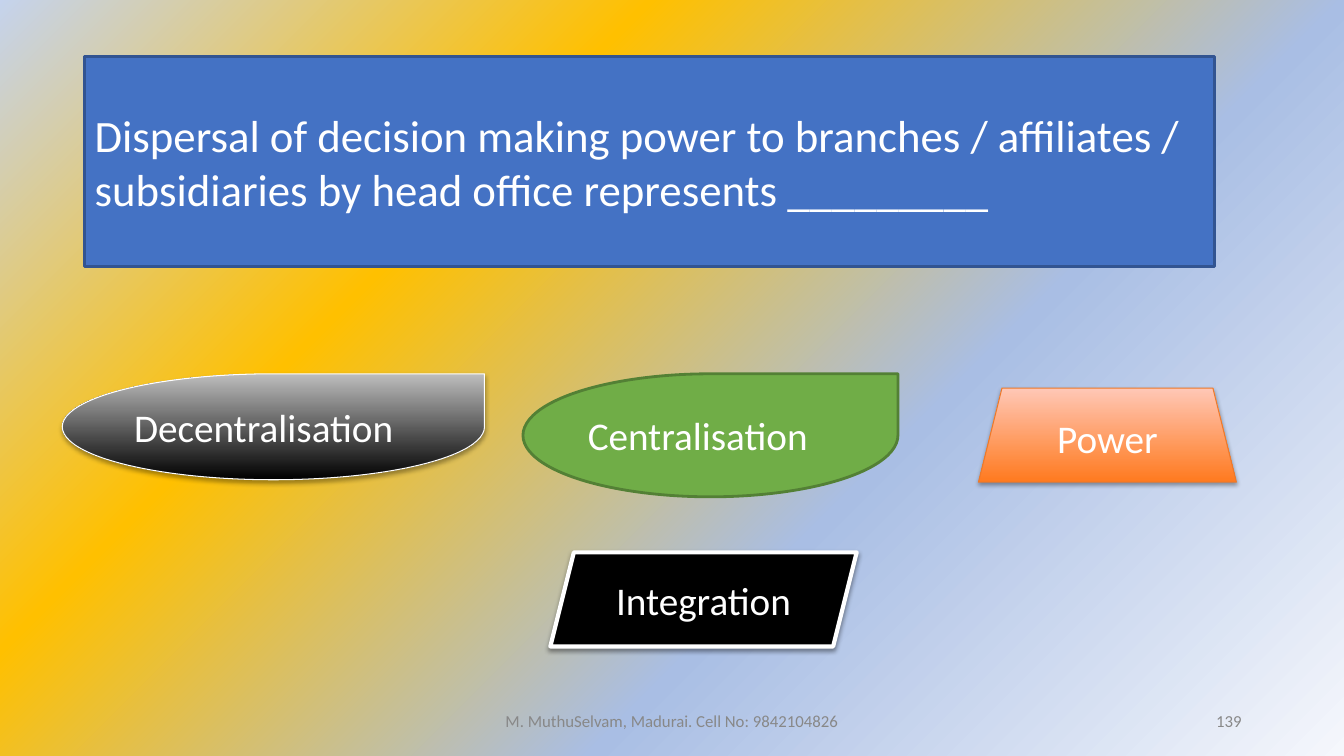
from lxml import etree
from pptx import Presentation
from pptx.dml.color import RGBColor
from pptx.enum.shapes import MSO_SHAPE
from pptx.enum.text import MSO_ANCHOR, MSO_AUTO_SIZE, PP_ALIGN
from pptx.oxml import parse_xml
from pptx.oxml.ns import nsdecls, qn
from pptx.util import Cm, Pt

TITLE_ONLY = 5
TEARDROP, TRAPEZOID, PARALLELOGRAM = (
    MSO_SHAPE.TEAR, MSO_SHAPE.TRAPEZOID, MSO_SHAPE.PARALLELOGRAM)
LEFT, CENTER, RIGHT = PP_ALIGN.LEFT, PP_ALIGN.CENTER, PP_ALIGN.RIGHT
MIDDLE = MSO_ANCHOR.MIDDLE
NO_AUTOFIT = MSO_AUTO_SIZE.NONE

UPWARD = '<a:lin ang="16200000" scaled="0"/>'
FROM_CORNER = ('<a:path path="circle"><a:fillToRect l="100000" t="100000"/></a:path>'
               '<a:tileRect r="-100000" b="-100000"/>')


def rgb(value):
    return RGBColor.from_string(value)


class QuizSlide:
    FONT = "Calibri"
    WHITE = "FFFFFF"
    GREY = "888888"

    def __init__(self, deck):
        self.slide = deck.slides.add_slide(deck.slide_layouts[TITLE_ONLY])

    def gradient(self, owner, fill, stops, direction):
        """Fill with (percent, colour) stops; direction is the closing XML."""
        fill.gradient()
        old = owner.find(".//" + qn("a:gradFill"))
        stop_xml = "".join(
            f'<a:gs pos="{percent * 1000}"><a:srgbClr val="{colour}"/></a:gs>'
            for percent, colour in stops)
        old.getparent().replace(old, parse_xml(
            f'<a:gradFill {nsdecls("a")} rotWithShape="1">'
            f'<a:gsLst>{stop_xml}</a:gsLst>{direction}</a:gradFill>'))

    def background(self, stops):
        self.gradient(self.slide._element, self.slide.background.fill,
                      stops, FROM_CORNER)

    def set_text(self, shape, text, size, colour, align):
        frame = shape.text_frame
        frame.word_wrap = True
        frame.auto_size = NO_AUTOFIT
        frame.vertical_anchor = MIDDLE
        frame.text = text
        paragraph = frame.paragraphs[0]
        paragraph.alignment = align
        paragraph.line_spacing = 1.0
        paragraph.space_before = Pt(0)
        font = paragraph.font
        font.name, font.size = self.FONT, Pt(size)
        font.color.rgb = rgb(colour)

    def paint(self, shape, fill, line, width):
        """Fill with one colour, or upward with a (bottom, top) pair."""
        if isinstance(fill, tuple):
            bottom, top = fill
            self.gradient(shape._element.spPr, shape.fill,
                          [(0, bottom), (100, top)], UPWARD)
        else:
            shape.fill.solid()
            shape.fill.fore_color.rgb = rgb(fill)
        shape.line.color.rgb = rgb(line)
        shape.line.width = Pt(width)

    def drop_shadow(self, shape, opacity, distance):
        effects = shape._element.spPr.find(qn("a:effectLst"))
        shadow = etree.SubElement(
            effects, qn("a:outerShdw"), blurRad="40000", dist=str(Pt(distance)),
            dir="5400000", rotWithShape="0")
        black = etree.SubElement(shadow, qn("a:srgbClr"), val="000000")
        etree.SubElement(black, qn("a:alpha"), val=str(opacity * 1000))

    def question(self, text, box, fill, line):
        """Put the title placeholder in a wave."""
        title = self.slide.shapes.title
        title.left, title.top, title.width, title.height = map(Cm, box)
        title._element.spPr.append(parse_xml(
            f'<a:prstGeom {nsdecls("a")} prst="wave"><a:avLst/></a:prstGeom>'))
        self.paint(title, fill, line, 2)
        self.set_text(title, text, 32, self.WHITE, LEFT)

    def answer(self, text, kind, box, fill, line, width, align, shadow=None):
        shape = self.slide.shapes.add_shape(kind, *map(Cm, box))
        shape.shadow.inherit = False
        self.paint(shape, fill, line, width)
        if shadow:
            self.drop_shadow(shape, *shadow)
        self.set_text(shape, text, 28, self.WHITE, align)

    def footer(self, text, left, width, align):
        box = self.slide.shapes.add_textbox(
            Cm(left), Cm(17.65), Cm(width), Cm(1.01))
        self.set_text(box, text, 12, self.GREY, align)


def main():
    deck = Presentation()
    deck.slide_width, deck.slide_height = Cm(33.87), Cm(19.05)
    quiz = QuizSlide(deck)
    quiz.background([(0, "F5F7FC"), (36, "A9BEE4"), (69, "FFC000"), (100, "C5D3ED")])
    quiz.question(
        "Dispersal of decision making power to branches / affiliates / "
        "subsidiaries by head office represents _________",
        (2.13, 1.43, 28.47, 5.28), "4472C4", "325491")

    soft, firm = (35, 1.8), (38, 1.6)
    quiz.answer("Decentralisation", TEARDROP, (1.57, 9.42, 10.64, 2.67),
                ("000000", "BDBDBD"), "FFFFFF", 0.75, LEFT, soft)
    quiz.answer("Power", TRAPEZOID, (24.66, 9.78, 6.5, 2.37),
                ("FF7A1F", "FFC7B6"), "EC792B", 0.75, CENTER, soft)
    quiz.answer("Integration", PARALLELOGRAM, (13.87, 13.92, 7.72, 2.37),
                "000000", "FFFFFF", 3, CENTER, firm)
    quiz.answer("Centralisation", TEARDROP, (13.18, 9.42, 9.45, 3.1),
                "70AD47", "538035", 2, LEFT)

    quiz.footer("M. MuthuSelvam, Madurai. Cell No: 9842104826", 11.22, 11.43, CENTER)
    quiz.footer("139", 23.92, 7.62, RIGHT)
    deck.save("out.pptx")


if __name__ == "__main__":
    main()
